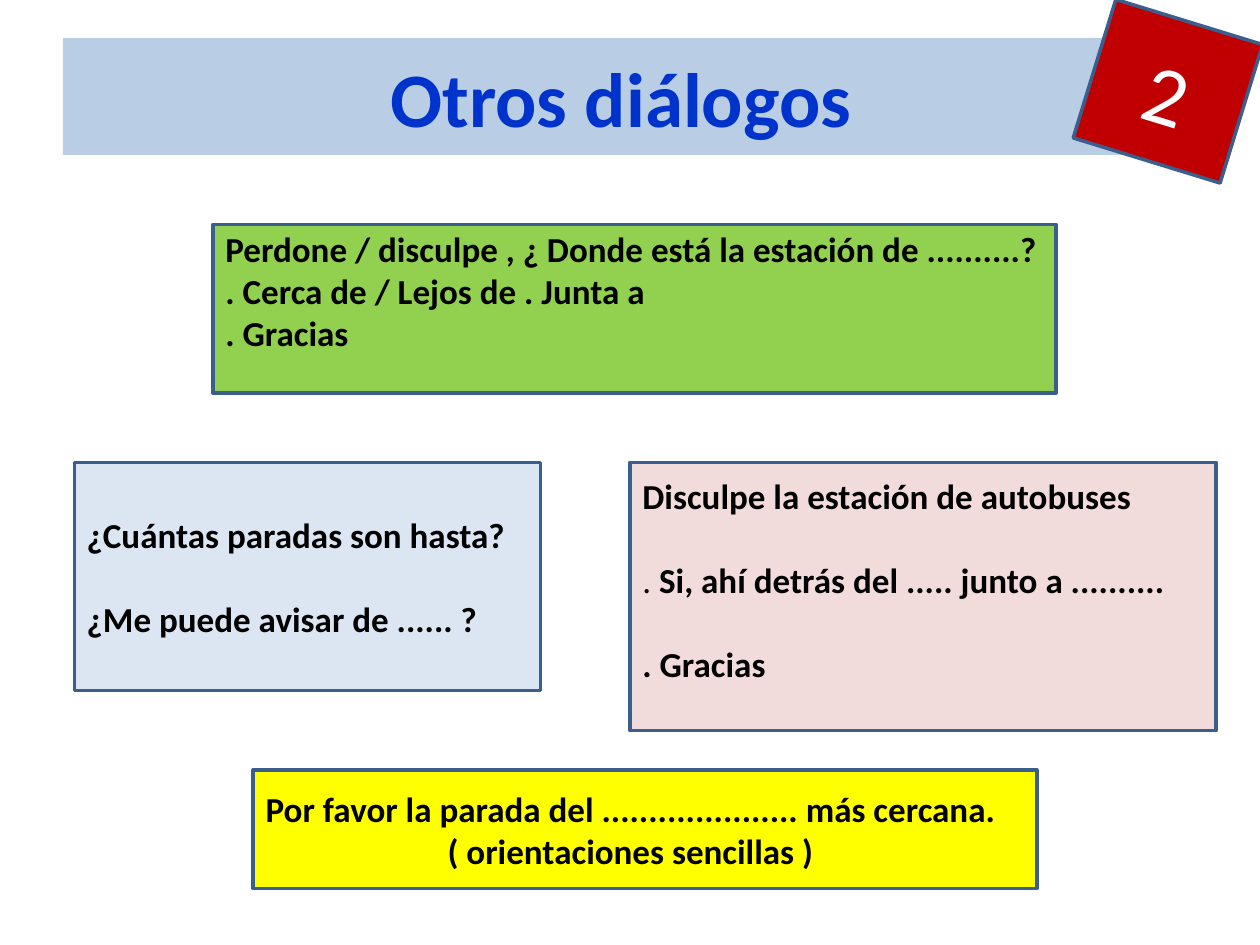
from pptx import Presentation
from pptx.dml.color import RGBColor
from pptx.enum import shapes, text
from pptx.util import Pt

THEME = {
    "font": "Calibri",
    "ink": "000000",
    "title_ink": "0033CC",
    "badge_ink": "FFFFFF",
    "border": "3A5F8C",
    "banner": "B9CDE5",
    "green": "92D050",
    "blue": "DCE6F2",
    "pink": "F2DCDB",
    "yellow": "FFFF00",
    "red": "C00000",
    "title": 44,
    "body": 20,
    "badge": 48,
}

TOP, MIDDLE = text.MSO_ANCHOR.TOP, text.MSO_ANCHOR.MIDDLE
LEFT, CENTER = text.PP_ALIGN.LEFT, text.PP_ALIGN.CENTER

BASE = {
    "size": "body", "ink": "ink", "bold": True, "border": True,
    "align": LEFT, "anchor": MIDDLE, "inset": 3.6, "gap": 0,
    "indents": {}, "rotation": 0,
}

BOXES = [
    {"at": (36, 21.6, 648, 67), "fill": "banner", "border": False,
     "size": "title", "ink": "title_ink", "align": CENTER,
     "lines": [[("Otros diálogos ", True)]]},
    {"at": (121.7, 128.2, 481.7, 96.5), "fill": "green",
     "anchor": TOP, "inset": 2,
     "lines": [
         [("Perdone / disculpe , ¿ Donde está la estación de ..........?", True)],
         [(". Cerca de / Lejos de . Junta a", True)],
         [(". Gracias", True)],
     ]},
    {"at": (42.5, 264.2, 266.4, 130.3), "fill": "blue", "gap": 24,
     "lines": [
         [("¿Cuántas paradas son hasta?", True)],
         [("¿Me puede avisar de ...... ?", True)],
     ]},
    {"at": (360, 264.2, 334.8, 153.4), "fill": "pink",
     "anchor": TOP, "inset": 7, "gap": 24,
     "lines": [
         [("Disculpe la estación de autobuses", True)],
         [(". ", False), ("Si, ahí detrás del ..... junto a ..........", True)],
         [(". Gracias", True)],
     ]},
    {"at": (144.7, 440, 447.8, 67.7), "fill": "yellow", "indents": {1: 104},
     "lines": [
         [("Por favor la parada del ..................... más cercana.", True)],
         [("( orientaciones sencillas )", True)],
     ]},
    {"at": (623.5, 10.8, 87.8, 82.8), "fill": "red", "rotation": 17.1,
     "size": "badge", "ink": "badge_ink", "align": CENTER,
     "lines": [[("2", False)]]},
]


def color(name):
    return RGBColor.from_string(THEME[name])


def apply(target, values):
    for name, value in values.items():
        setattr(target, name, value)


def add_line(paragraph, index, runs, style):
    apply(paragraph, {
        "alignment": style["align"],
        "space_before": Pt(style["gap"] if index else 0),
    })
    if index in style["indents"]:
        properties = paragraph._p.get_or_add_pPr()
        properties.set("marL", str(Pt(style["indents"][index])))
    for words, bold in runs:
        span = paragraph.add_run()
        span.text = words
        apply(span.font, {
            "name": THEME["font"], "size": Pt(THEME[style["size"]]), "bold": bold,
        })
        span.font.color.rgb = color(style["ink"])


def add_box(page, content):
    style = {**BASE, **content}
    box = page.shapes.add_shape(
        shapes.MSO_SHAPE.RECTANGLE, *(Pt(length) for length in style["at"]))
    box.shadow.inherit = False
    box.rotation = style["rotation"]
    box.fill.solid()
    box.fill.fore_color.rgb = color(style["fill"])
    if style["border"]:
        box.line.color.rgb = color("border")
        box.line.width = Pt(2)
    else:
        box.line.fill.background()
    frame = box.text_frame
    apply(frame, {
        "word_wrap": True, "vertical_anchor": style["anchor"],
        "margin_top": Pt(style["inset"]), "margin_bottom": Pt(3.6),
        "margin_left": Pt(7.2), "margin_right": Pt(7.2),
    })
    for index, runs in enumerate(style["lines"]):
        paragraph = frame.add_paragraph() if index else frame.paragraphs[0]
        add_line(paragraph, index, runs, style)


def main():
    deck = Presentation()
    apply(deck, {"slide_width": Pt(720), "slide_height": Pt(540)})
    page = deck.slides.add_slide(deck.slide_layouts[6])
    for content in BOXES:
        add_box(page, content)
    deck.save("out.pptx")


if __name__ == "__main__":
    main()
